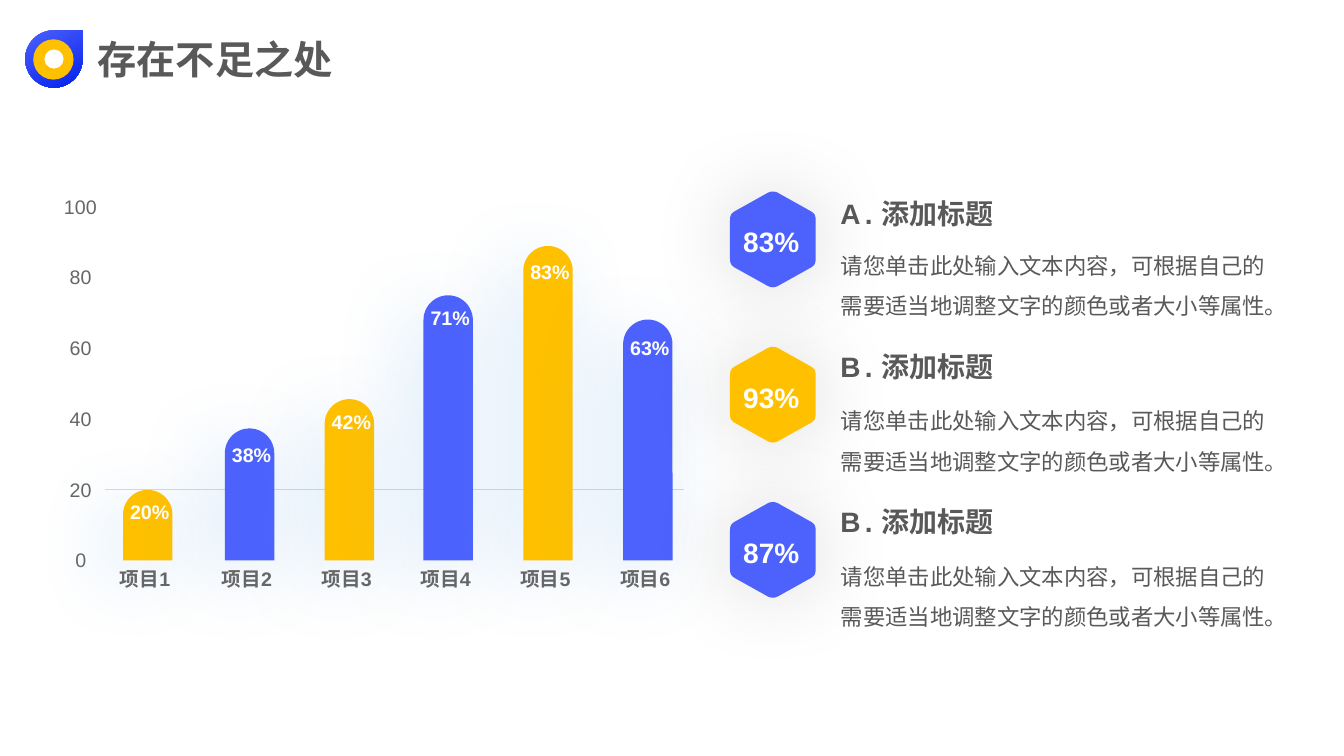
from lxml.etree import SubElement
from pptx import Presentation
from pptx.dml.color import RGBColor
from pptx.enum.shapes import MSO_CONNECTOR as CONNECTOR, MSO_SHAPE as SHAPE
from pptx.enum.text import MSO_ANCHOR as ANCHOR, PP_ALIGN as ALIGN
from pptx.oxml.ns import qn
from pptx.util import Inches, Pt

BLUE, GOLD, WHITE = "4D62FD", "FFC000", "FFFFFF"
DARK, GRAY = "595959", "666666"
TITLE = "存在不足之处"
BARS = [
    ("项目1", "20%", 1.22, 4.86, 4.95, GOLD),
    ("项目2", "38%", 2.23, 4.25, 4.39, BLUE),
    ("项目3", "42%", 3.22, 3.96, 4.06, GOLD),
    ("项目4", "71%", 4.20, 2.93, 3.03, BLUE),
    ("项目5", "83%", 5.19, 2.44, 2.57, GOLD),
    ("项目6", "63%", 6.18, 3.17, 3.33, BLUE),
]
AXIS_VALUES = [0, 20, 40, 60, 80, 100]
DESCRIPTION = "请您单击此处输入文本内容，可根据自己的需要适当地调整文字的颜色或者大小等属性。"
ITEMS = [
    ("A.", "添加标题", "83%", 1.95, BLUE),
    ("B.", "添加标题", "93%", 3.47, GOLD),
    ("B.", "添加标题", "87%", 5.01, BLUE),
]
BASELINE, BAR_WIDTH = 5.56, 0.49
AXIS_CENTER, AXIS_BOTTOM, AXIS_STEP = 0.79, 5.4, 0.702
ITEM_TOP, ITEM_STEP = 1.9, 1.54
HEXAGON_CENTER, HEXAGON_HALF = 7.665, 0.475
HEXAGON_QUARTER = [(0, -0.475), (0.02, -0.473), (0.045, -0.465), (0.385, -0.275),
                   (0.403, -0.26), (0.415, -0.245), (0.423, -0.22), (0.425, -0.19)]

presentation = Presentation()
presentation.slide_width, presentation.slide_height = Inches(13.33), Inches(7.5)
slide = presentation.slides.add_slide(presentation.slide_layouts[6])
shapes = slide.shapes


def color(value):
    return RGBColor.from_string(value)


def box(*lengths):
    return [Inches(length) for length in lengths]


def add_text(text, *place, size=14, ink=DARK, bold=False, align=ALIGN.LEFT, anchor=ANCHOR.TOP,
             insets=(0, 0), wrap=True, line_spacing=None, letter_spacing=None):
    frame = shapes.add_textbox(*box(*place)).text_frame
    frame.word_wrap, frame.vertical_anchor = wrap, anchor
    frame.margin_left = frame.margin_right = Inches(insets[0])
    frame.margin_top = frame.margin_bottom = Inches(insets[1])
    paragraph = frame.paragraphs[0]
    paragraph.alignment, paragraph.line_spacing = align, line_spacing
    run = paragraph.add_run()
    run.text = text
    run.font.name, run.font.size, run.font.bold = "Arial", Pt(size), bold
    run.font.color.rgb = color(ink)
    if letter_spacing:
        run.font._element.set("spc", str(letter_spacing * 100))


def paint(shape, fill, shadow=None):
    shape.fill.solid()
    shape.fill.fore_color.rgb = color(fill)
    shape.line.fill.background()
    shape.shadow.inherit = False
    if shadow:
        tint, opacity, blur, distance, angle = shadow
        effects = shape._element.spPr.find(qn("a:effectLst"))
        outer = SubElement(effects, qn("a:outerShdw"), blurRad=str(Pt(blur)), dist=str(Pt(distance)),
                           dir=str(angle * 60000), algn="ctr", rotWithShape="0")
        tone = SubElement(outer, qn("a:srgbClr"), val=tint)
        SubElement(tone, qn("a:alpha"), val=str(opacity * 1000))


def add_header():
    teardrop = shapes.add_shape(SHAPE.TEAR, *box(0.25, 0.3, 0.57, 0.57))
    paint(teardrop, BLUE)
    teardrop.fill.gradient()
    teardrop.fill.gradient_angle = 300
    for stop, position, shade in zip(teardrop.fill.gradient_stops, (0, 1), (BLUE, "0420ED")):
        stop.position, stop.color.rgb = position, color(shade)
    for left, top, diameter, fill in [(0.33, 0.39, 0.4, GOLD), (0.44, 0.49, 0.19, WHITE)]:
        paint(shapes.add_shape(SHAPE.OVAL, *box(left, top, diameter, diameter)), fill)
    add_text(TITLE, 0.87, 0.3, 2.6, 0.57, size=28, bold=True, insets=(0.1, 0.05))


def add_bar_chart():
    for index, value in enumerate(AXIS_VALUES):
        width = 0.165 + 0.105 * len(str(value))
        add_text(str(value), AXIS_CENTER - width / 2, AXIS_BOTTOM - index * AXIS_STEP, width, 0.31,
                 ink=GRAY, align=ALIGN.RIGHT, insets=(0.07, 0.04), wrap=False)
    gridline = shapes.add_connector(CONNECTOR.STRAIGHT, *box(1.04, 4.85, 6.78, 4.85))
    gridline.line.color.rgb, gridline.line.width = color("D9D9D9"), Pt(0.5)
    SubElement(gridline._element.spPr, qn("a:effectLst"))
    for name, percent, left, top, label_top, fill in BARS:
        bar = shapes.add_shape(SHAPE.ROUND_2_SAME_RECTANGLE, *box(left, top, BAR_WIDTH, BASELINE - top))
        bar.adjustments[0], bar.adjustments[1] = 0.5, 0
        paint(bar, fill, shadow=("4999E9", 20, 55, 15, 135))
        add_text(name, left - 0.06, 5.62, 0.56, 0.24, ink=GRAY, bold=True, align=ALIGN.CENTER)
        add_text(percent, left - 0.08, label_top, 0.69, 0.24, ink=WHITE, bold=True,
                 align=ALIGN.CENTER, anchor=ANCHOR.BOTTOM)


def add_hexagon(top, fill):
    right = HEXAGON_QUARTER + [(x, -y) for x, y in reversed(HEXAGON_QUARTER)]
    outline = right + [(-x, y) for x, y in reversed(right[1:-1])]
    points = [box(HEXAGON_CENTER + x, top + HEXAGON_HALF + y) for x, y in outline]
    builder = shapes.build_freeform(*points[0])
    builder.add_line_segments(points[1:], close=True)
    paint(builder.convert_to_shape(), fill, shadow=("000000", 15, 60, 0, 0))


def add_items():
    for index, (letter, heading, percent, heading_top, fill) in enumerate(ITEMS):
        top = ITEM_TOP + index * ITEM_STEP
        add_text(letter, 8.28, heading_top, 0.43, 0.34, size=20, bold=True,
                 align=ALIGN.CENTER, letter_spacing=3)
        add_text(DESCRIPTION, 8.34, top + 0.47, 4.41, 0.76, size=16, line_spacing=1.5)
        add_text(heading, 8.74, heading_top, 1.61, 0.34, size=20, bold=True)
        add_hexagon(top, fill)
        add_text(percent, 7.37, top + 0.33, 0.56, 0.34, size=20, ink=WHITE, bold=True,
                 align=ALIGN.CENTER, wrap=False)


def main():
    add_header()
    add_bar_chart()
    add_items()
    presentation.save("out.pptx")


if __name__ == "__main__":
    main()
